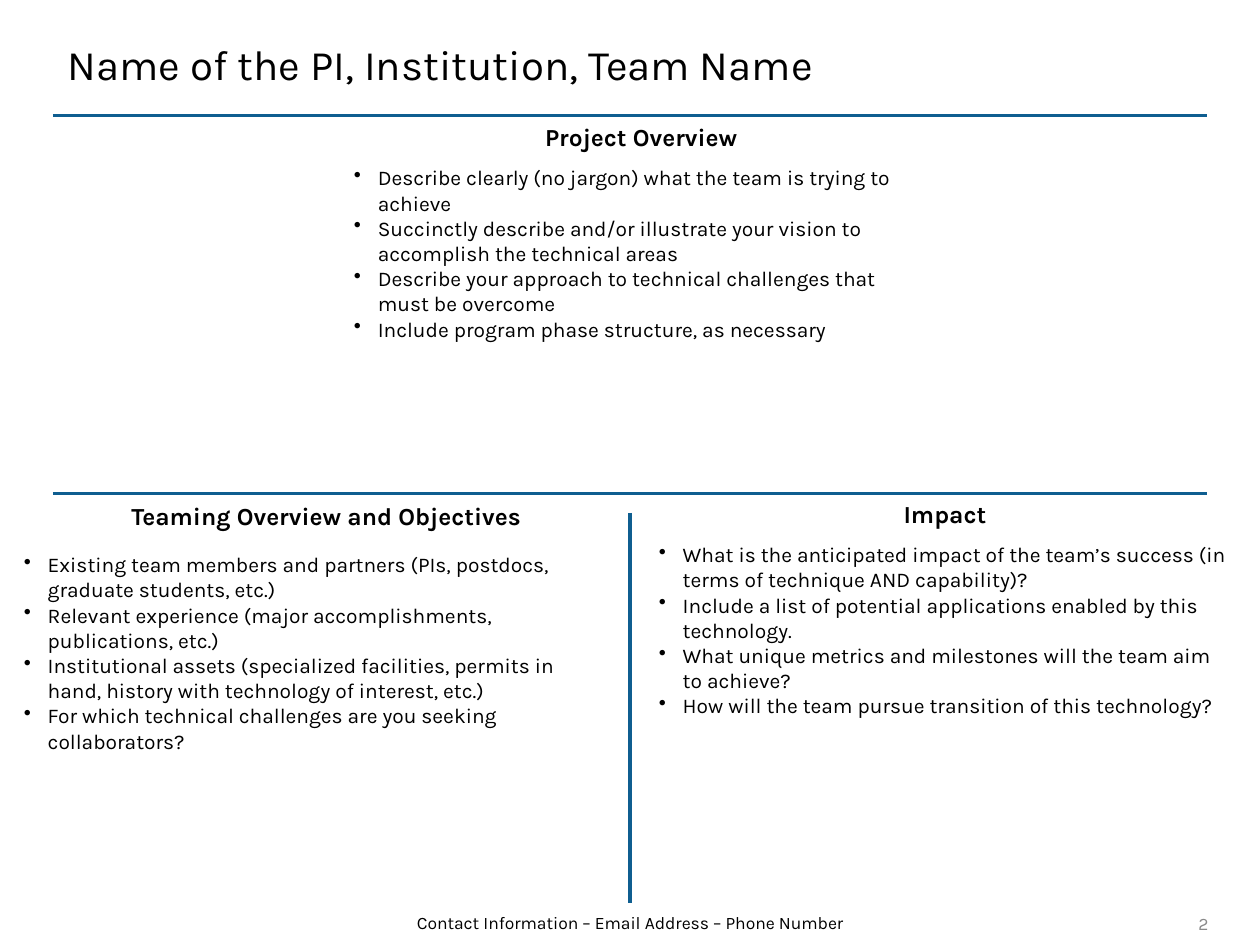
from lxml.etree import SubElement
from pptx import Presentation
from pptx.dml.color import RGBColor
from pptx.enum.shapes import MSO_CONNECTOR
from pptx.enum.text import MSO_ANCHOR as Anchor, PP_ALIGN as Align
from pptx.oxml.ns import qn
from pptx.util import Inches, Pt

COLORS = {"rule": "0F5E90", "text": "000000", "page": "898989"}
BULLET_INDENT = Inches(0.19)
PANEL_WIDTH = 4.75
HEADING_HEIGHT = 0.34
RULE_LEFT, RULE_RIGHT, CENTER = 0.42, 9.58, 5

# Each panel: heading, heading (left, top, width), list (left, top, height), items
PANELS = [
    ("Project Overview", (2.59, 0.92, 5), (2.71, 1.26, 1.51), [
        "Describe clearly (no jargon) what the team is trying to achieve",
        "Succinctly describe and/or illustrate your vision to accomplish the technical areas",
        "Describe your approach to technical challenges that must be overcome",
        "Include program phase structure, as necessary",
    ]),
    ("Teaming Overview and Objectives", (0.57, 3.93, 4.04), (0.09, 4.33, 1.72), [
        "Existing team members and partners (PIs, postdocs, graduate students, etc.)",
        "Relevant experience (major accomplishments, publications, etc.)",
        "Institutional assets (specialized facilities, permits in hand, "
        "history with technology of interest, etc.)",
        "For which technical challenges are you seeking collaborators?",
    ]),
    ("Impact", (5, 3.91, 5), (5.13, 4.25, 1.51), [
        "What is the anticipated impact of the team’s success "
        "(in terms of technique AND capability)?",
        "Include a list of potential applications enabled by this technology.",
        "What unique metrics and milestones will the team aim to achieve?",
        "How will the team pursue transition of this technology?",
    ]),
]


class SlideBuilder:
    def __init__(self, slide, font_name="Karla"):
        self.slide = slide
        self.font_name = font_name

    def rule(self, start, end):
        line = self.slide.shapes.add_connector(
            MSO_CONNECTOR.STRAIGHT, *map(Inches, start + end))
        line.line.color.rgb = RGBColor.from_string(COLORS["rule"])
        line.line.width = Pt(1.75)
        SubElement(line._element.spPr, qn("a:effectLst"))

    def text(self, box, lines, size, color="text", bold=False,
             align=Align.LEFT, anchor=Anchor.TOP, bulleted=False):
        frame = self.slide.shapes.add_textbox(*map(Inches, box)).text_frame
        frame.word_wrap = True
        frame.vertical_anchor = anchor
        frame.text = "\n".join(lines)
        font_format = {"name": self.font_name, "size": Pt(size), "bold": bold}
        for paragraph in frame.paragraphs:
            paragraph.alignment = align
            if bulleted:
                self.bullet(paragraph)
            for run in paragraph.runs:
                for attribute, value in font_format.items():
                    setattr(run.font, attribute, value)
                run.font.color.rgb = RGBColor.from_string(COLORS[color])

    def bullet(self, paragraph):
        properties = paragraph._p.get_or_add_pPr()
        properties.set("marL", str(BULLET_INDENT))
        properties.set("indent", str(-BULLET_INDENT))
        SubElement(properties, qn("a:buChar")).set("char", "•")

    def panel(self, heading, heading_place, list_place, items):
        """Add a centred heading and the bulleted list below it."""
        self.text((*heading_place, HEADING_HEIGHT), [heading], 14,
                  bold=True, align=Align.CENTER)
        left, top, height = list_place
        self.text((left, top, PANEL_WIDTH, height), items, 12, bulleted=True)


def main():
    presentation = Presentation()
    presentation.slide_width = Inches(10)
    presentation.slide_height = Inches(7.5)
    builder = SlideBuilder(
        presentation.slides.add_slide(presentation.slide_layouts[6]))

    for rule_top in (0.92, 3.92):
        builder.rule((RULE_LEFT, rule_top), (RULE_RIGHT, rule_top))
    builder.rule((CENTER, 4.07), (CENTER, 7.17))

    builder.text((0.44, 0.17, 7.81, 0.67),
                 ["Name of the PI, Institution, Team Name"], 24,
                 anchor=Anchor.MIDDLE)
    for panel in PANELS:
        builder.panel(*panel)
    builder.text((1.46, 7.16, 7.08, 0.33),
                 ["Contact Information – Email Address – Phone Number"], 10,
                 align=Align.CENTER, anchor=Anchor.MIDDLE)
    builder.text((8.86, 7.17, 0.83, 0.32), ["2"], 10, color="page",
                 align=Align.RIGHT, anchor=Anchor.MIDDLE)

    presentation.save("out.pptx")


if __name__ == "__main__":
    main()
